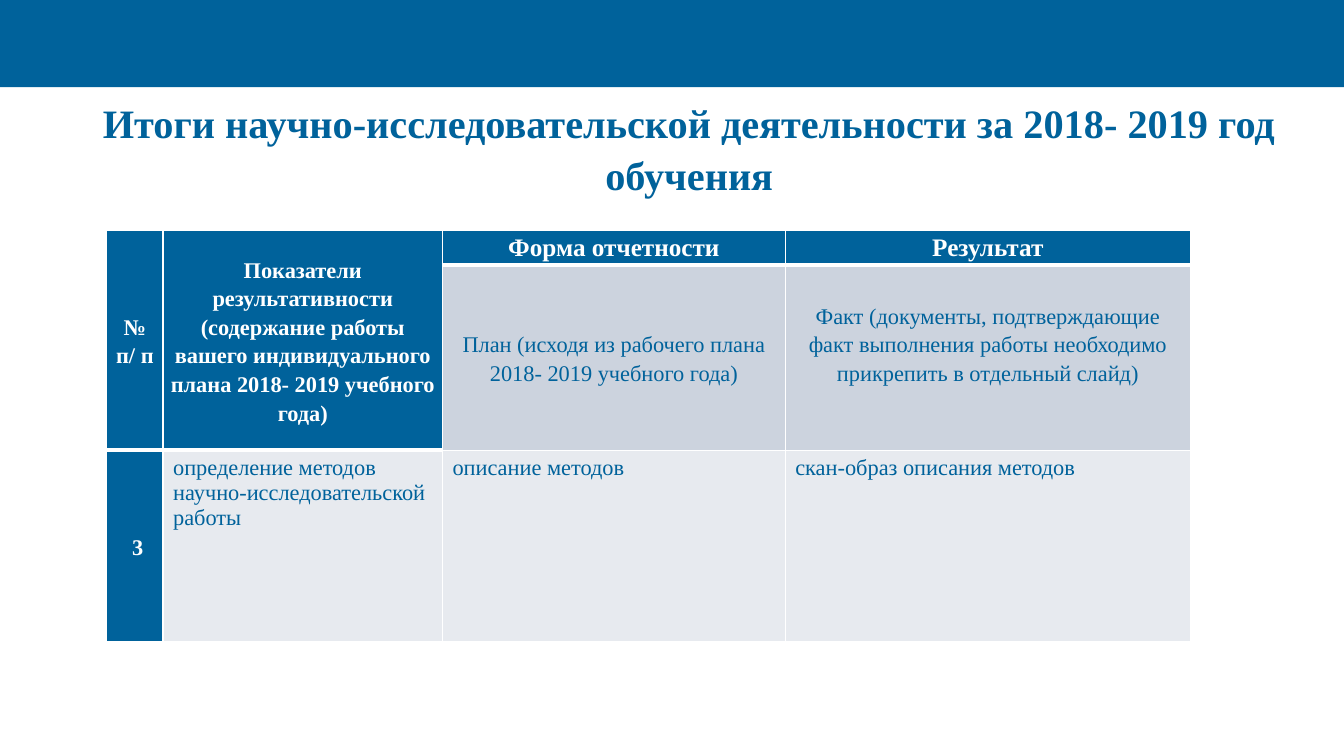
from lxml.etree import SubElement
from pptx import Presentation
from pptx.dml.color import RGBColor as Rgb
from pptx.enum.shapes import MSO_SHAPE as Shape
from pptx.enum.text import MSO_ANCHOR as Anchor, PP_ALIGN as Align
from pptx.oxml.ns import qn
from pptx.util import Cm, Pt

INK = {"blue": "00629B", "white": "FFFFFF", "mid": "CCD3DE", "pale": "E7EAEF"}
COLS = [1.42, 7.04, 8.64, 10.21]
ROWS = [0.84, 4.31, 4.83]
HEAD = dict(color="white", bold=True, align=Align.CENTER, gap=1.15)
PLAN = dict(align=Align.CENTER, gap=1.15)
# row, column, text, cell fill, text format, cell margins and anchor
SIDE = dict(margin_left=Cm(0.18), margin_right=Cm(0.18),
            margin_top=0, margin_bottom=0)
MID = dict(SIDE, vertical_anchor=Anchor.MIDDLE)
CELLS = [
    (0, 0, "№ п/ п", "blue", HEAD, MID),
    (0, 1, "Показатели результативности\n(содержание работы вашего "
           "индивидуального плана 2018- 2019 учебного года)", "blue", HEAD, MID),
    (0, 2, "Форма отчетности", "blue", dict(HEAD, size=18), SIDE),
    (0, 3, "Результат", "blue", dict(HEAD, size=18), SIDE),
    (1, 2, "План (исходя из рабочего плана 2018- 2019 учебного года)",
     "mid", PLAN, MID),
    (1, 3, "Факт (документы, подтверждающие факт выполнения работы "
           "необходимо прикрепить в отдельный слайд)",
     "mid", PLAN, dict(MID, margin_bottom=Cm(0.72))),
    (2, 0, "3", "blue", HEAD, dict(MID, margin_left=Cm(0.32))),
    (2, 1, "определение методов научно-исследовательской работы",
     "pale", {}, {}),
    (2, 2, "описание методов", "pale", {}, {}),
    (2, 3, "скан-образ описания методов", "pale", {}, {}),
]


def write(frame, text, size=16, color="blue", bold=False,
          align=Align.LEFT, gap=1.0):
    frame.word_wrap = True
    for i, line in enumerate(text.split("\n")):
        para = frame.add_paragraph() if i else frame.paragraphs[0]
        para.alignment, para.line_spacing = align, gap
        run = para.add_run()
        run.text = line
        font = run.font
        font.name, font.size, font.bold = "Times New Roman", Pt(size), bold
        font.color.rgb = Rgb.from_string(INK[color])


def paint(fill, color):
    fill.solid()
    fill.fore_color.rgb = Rgb.from_string(INK[color])


def edge(cell, **widths):
    """Draw white cell borders; widths are in points, keyed by side."""
    props = cell._tc.get_or_add_tcPr()
    for side, width in widths.items():
        line = SubElement(props, qn(f"a:ln{side}"), w=str(Pt(width)))
        fill = SubElement(line, qn("a:solidFill"))
        SubElement(fill, qn("a:srgbClr"), val=INK["white"])


def add_bar(slide, x, y, w, h):
    bar = slide.shapes.add_shape(Shape.RECTANGLE, x, y, w, h)
    bar.shadow.inherit = False
    paint(bar.fill, "blue")
    bar.line.fill.background()


def add_title(slide, x, y, w, h):
    frame = slide.shapes.add_textbox(x, y, w, h).text_frame
    frame.vertical_anchor = Anchor.MIDDLE
    write(frame, "Итоги научно-исследовательской деятельности за "
                 "2018- 2019 год обучения",
          size=28.8, bold=True, align=Align.CENTER, gap=1.08)


def add_grid(slide, x, y, w, h):
    table = slide.shapes.add_table(len(ROWS), len(COLS), x, y, w, h).table
    for col, width in zip(table.columns, COLS):
        col.width = Cm(width)
    for row, height in zip(table.rows, ROWS):
        row.height = Cm(height)
    for c in (0, 1):
        table.cell(0, c).merge(table.cell(1, c))
    for r in range(len(ROWS)):
        for c in range(len(COLS)):
            last = 1 if c < 2 else 0  # last header row of this column
            edge(table.cell(r, c), L=1, R=1,
                 T=3 if r == last + 1 else 1, B=3 if r <= last else 1)
    for r, c, text, fill, style, box in CELLS:
        cell = table.cell(r, c)
        paint(cell.fill, fill)
        write(cell.text_frame, text, **style)
        for name, value in box.items():
            setattr(cell, name, value)


def main():
    deck = Presentation()
    deck.slide_width, deck.slide_height = Cm(33.87), Cm(19.05)
    slide = deck.slides.add_slide(deck.slide_layouts[6])
    add_bar(slide, 0, 0, deck.slide_width, Cm(2.2))
    add_title(slide, Cm(2.13), Cm(2.54), Cm(30.48), Cm(2.29))
    add_grid(slide, Cm(2.69), Cm(5.8), Cm(sum(COLS)), Cm(sum(ROWS)))
    deck.save("out.pptx")


if __name__ == "__main__":
    main()
